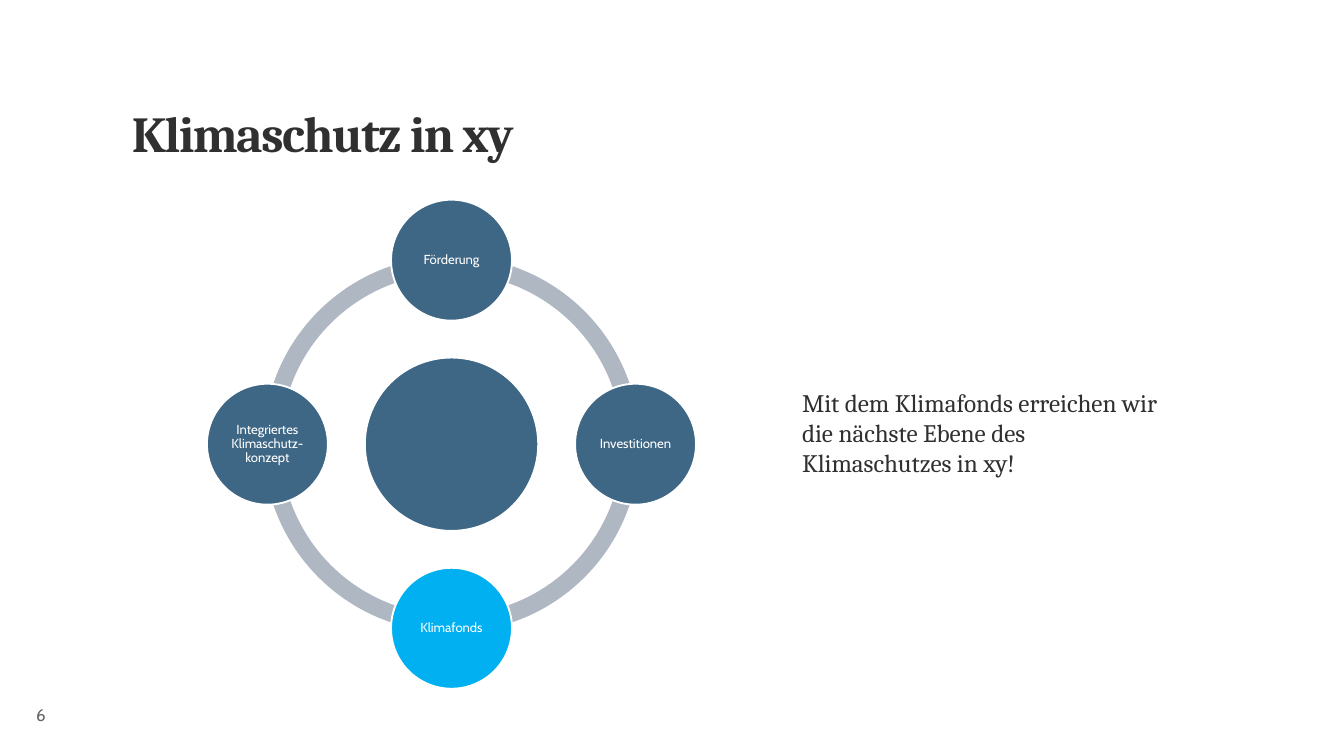
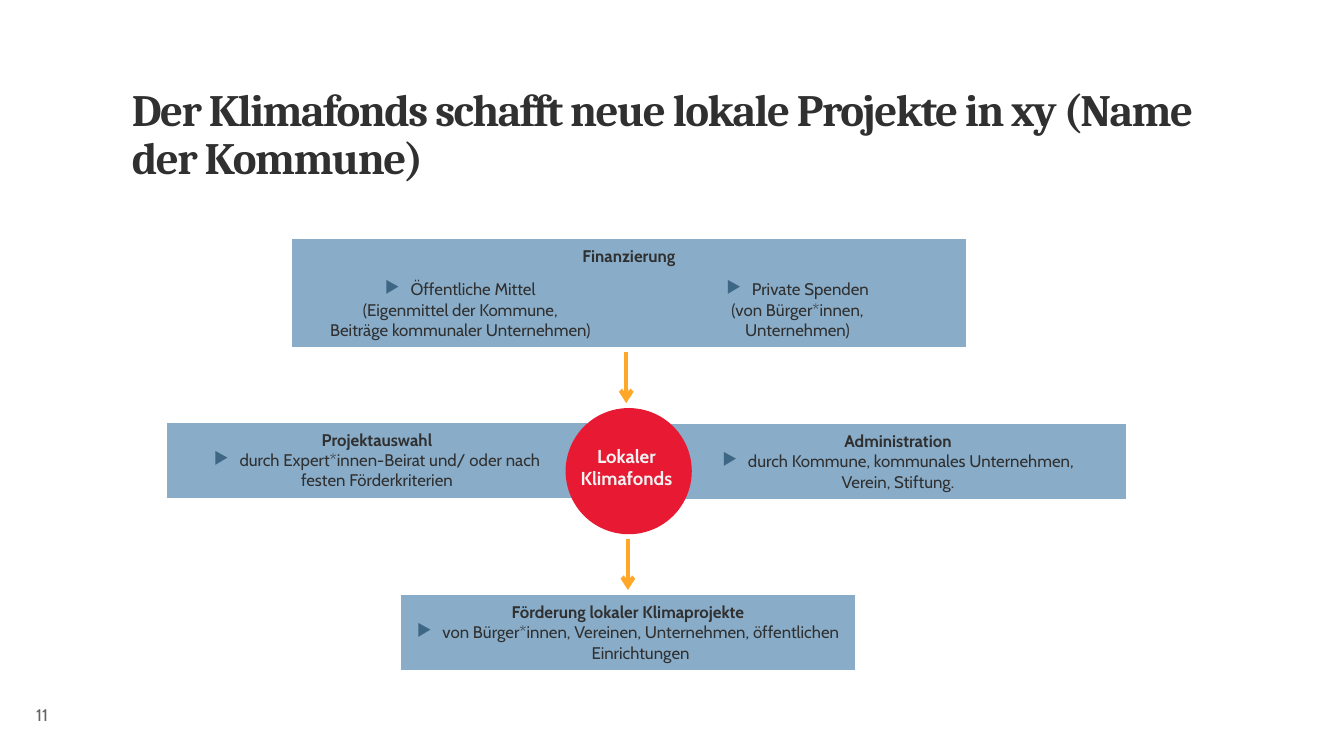
import dataclasses
import math

import lxml.etree
import pptx
import pptx.dml.color
import pptx.enum.shapes
import pptx.enum.text
import pptx.oxml.ns
import pptx.util

Pt = pptx.util.Pt
qn = pptx.oxml.ns.qn
SHAPE = pptx.enum.shapes.MSO_SHAPE
ALIGN = pptx.enum.text.PP_ALIGN
ANCHOR = pptx.enum.text.MSO_ANCHOR


@dataclasses.dataclass(frozen=True)
class Theme:
    """Colours, fonts and type sizes of the deck."""
    ink: str = "303030"
    muted: str = "636363"
    white: str = "FFFFFF"
    pale: str = "F2F2F2"
    navy: str = "3E6685"
    sky: str = "00B0F0"
    ring: str = "AFB8C2"
    panel: str = "89ADC9"
    red: str = "E81A33"
    amber: str = "FFA728"
    serif: str = "Cambria"
    sans: str = "Cabin"
    statement: float = 13.5
    label: float = 10
    body: float = 9
    node: float = 7


T = Theme()


def rgb(value):
    """Turn a hex string into a colour."""
    return pptx.dml.color.RGBColor.from_string(value)


def style(p, size, color, font=T.sans, bold=False, align=None, spacing=None):
    """Format a paragraph and all its runs."""
    p.alignment = align
    p.line_spacing = spacing
    for r in p.runs:
        r.font.size = Pt(size)
        r.font.name = font
        r.font.bold = bold
        r.font.color.rgb = rgb(color)


def set_frame(tf, anchor, margins):
    """Set wrapping, anchor and left, top, right, bottom margins."""
    tf.word_wrap = True
    tf.vertical_anchor = anchor
    tf.margin_left, tf.margin_top, tf.margin_right, tf.margin_bottom = map(Pt, margins)


def add_text(s, box, text, size, color, anchor=ANCHOR.TOP, margins=(7.2, 3.6, 7.2, 3.6), **look):
    """Add a one-paragraph text box and return the paragraph."""
    tf = s.shapes.add_textbox(*map(Pt, box)).text_frame
    set_frame(tf, anchor, margins)
    tf.text = text
    p = tf.paragraphs[0]
    style(p, size, color, **look)
    return p


def add_base(prs, title, title_size, number):
    """Add a blank slide with its title and page number."""
    s = prs.slides.add_slide(prs.slide_layouts[6])
    add_text(s, (19.4, 367.2, 39.6, 20.9), number, T.body, T.muted,
             anchor=ANCHOR.BOTTOM, margins=(0, 3.6, 7.2, 0))
    p = add_text(s, (70.6, 26.6, 572.4, 92.2), title, title_size, T.ink, anchor=ANCHOR.MIDDLE,
                 margins=(0, 0, 0, 0), font=T.serif, bold=True, spacing=0.9)
    for r in p.runs:
        r.font._element.set("spc", "-80")
    return s


def add_round(s, kind, cx, cy, size, fill, line=None):
    """Add a preset shape centred on a point."""
    sp = s.shapes.add_shape(kind, Pt(cx - size / 2), Pt(cy - size / 2), Pt(size), Pt(size))
    sp.shadow.inherit = False
    sp.fill.solid()
    sp.fill.fore_color.rgb = rgb(fill)
    if line:
        sp.line.color.rgb = rgb(line)
        sp.line.width = Pt(1)
    else:
        sp.line.fill.background()
    return sp


def add_cycle(s, cx, cy, nodes):
    """Add a hub, a ring of arcs and labelled nodes, clockwise from the top."""
    orbit, ring_size, hub_size, node_size = 98.6, 201.6, 92.9, 64.8
    step = 360 / len(nodes)
    for i in range(len(nodes)):
        arc = add_round(s, SHAPE.BLOCK_ARC, cx, cy, ring_size, T.ring)
        start = i * step
        for j, value in enumerate((start * 0.6, (start + step) % 360 * 0.6, 0.046)):
            arc.adjustments[j] = value
    add_round(s, SHAPE.OVAL, cx, cy, hub_size, T.navy, T.white)
    for i, (text, fill) in enumerate(nodes):
        angle = math.radians(i * step - 90)
        sp = add_round(s, SHAPE.OVAL, cx + orbit * math.cos(angle),
                       cy + orbit * math.sin(angle), node_size, fill, T.white)
        tf = sp.text_frame
        set_frame(tf, ANCHOR.MIDDLE, (0.7, 0.7, 0.7, 0.7))
        tf.text = text
        style(tf.paragraphs[0], T.node, T.white, align=ALIGN.CENTER, spacing=0.9)


def add_bullet(p):
    """Give a paragraph a hanging triangle bullet."""
    pPr = p._p.get_or_add_pPr()
    pPr.set("marL", str(Pt(13.7)))
    pPr.set("indent", str(-Pt(13.7)))
    color = lxml.etree.SubElement(pPr, qn("a:buClr"))
    lxml.etree.SubElement(color, qn("a:srgbClr"), val=T.navy)
    lxml.etree.SubElement(pPr, qn("a:buChar"), char="▶")


def fill_cell(cell, heading, lines):
    """Write an optional bold heading, then lines of which the first is bulleted."""
    cell.fill.solid()
    cell.fill.fore_color.rgb = rgb(T.panel)
    tcPr = cell._tc.get_or_add_tcPr()
    for i, side in enumerate(("a:lnL", "a:lnR", "a:lnT", "a:lnB")):
        ln = lxml.etree.Element(qn(side), w="0")
        lxml.etree.SubElement(ln, qn("a:noFill"))
        tcPr.insert(i, ln)
    texts = ([heading] if heading else []) + lines
    cell.text_frame.text = "\n".join(texts)
    first_line = 1 if heading else 0
    for i, p in enumerate(cell.text_frame.paragraphs):
        style(p, T.body, T.ink, bold=i < first_line, align=ALIGN.CENTER)
        if i == first_line and lines:
            add_bullet(p)


def add_panel(s, left, top, width, heights, rows):
    """Add a panel table; rows hold (heading, lines) cells and a lone cell spans its row."""
    cols = max(map(len, rows))
    table = s.shapes.add_table(len(rows), cols, Pt(left), Pt(top), Pt(width), Pt(sum(heights))).table
    table.first_row = table.horz_banding = False
    for i, (height, cells) in enumerate(zip(heights, rows)):
        table.rows[i].height = Pt(height)
        if len(cells) < cols:
            table.cell(i, 0).merge(table.cell(i, cols - 1))
        for j, content in enumerate(cells):
            fill_cell(table.cell(i, j), *content)


def add_down_arrow(s, x, top, length):
    """Add a downward arrow."""
    line = s.shapes.add_connector(pptx.enum.shapes.MSO_CONNECTOR.STRAIGHT,
                                  Pt(x), Pt(top), Pt(x), Pt(top + length))
    line.line.color.rgb = rgb(T.amber)
    line.line.width = Pt(2.25)
    lxml.etree.SubElement(line.line._get_or_add_ln(), qn("a:tailEnd"), type="arrow")
    lxml.etree.SubElement(line._element.spPr, qn("a:effectLst"))


def build_cycle_slide(prs):
    """Build the slide on climate protection activities."""
    s = add_base(prs, "Klimaschutz in xy", 27, "6")
    add_cycle(s, 241.9, 238, [
        ("Förderung", T.navy),
        ("Investitionen", T.navy),
        ("Klimafonds", T.sky),
        ("Integriertes Klimaschutz- konzept", T.navy),
    ])
    add_text(s, (422.6, 203.8, 206.6, 56.2),
             "Mit dem Klimafonds erreichen wir die nächste Ebene des Klimaschutzes in xy!",
             T.statement, T.ink, font=T.serif)


def build_fund_slide(prs):
    """Build the slide on how the fund works."""
    s = add_base(prs, "Der Klimafonds schafft neue lokale Projekte in xy (Name der Kommune)", 24, "11")
    add_panel(s, 358.6, 227.4, 244.8, [39.8], [[
        ("Administration", ["durch Kommune, kommunales Unternehmen,", "Verein, Stiftung."])]])
    add_panel(s, 89.2, 226.8, 225.4, [39.8], [[
        ("Projektauswahl", ["durch Expert*innen-Beirat und/ oder nach", "festen Förderkriterien"])]])
    add_round(s, SHAPE.OVAL, 336.8, 252.4, 67.6, T.red)
    add_text(s, (301, 234.7, 69.1, 31.7), "Lokaler Klimafonds", T.label, T.pale,
             bold=True, align=ALIGN.CENTER)
    add_panel(s, 156.2, 128.2, 361.4, [18, 39.8], [
        [("Finanzierung", [])],
        [(None, ["Öffentliche Mittel", "(Eigenmittel der Kommune,", "Beiträge kommunaler Unternehmen)"]),
         (None, ["Private Spenden", "(von Bürger*innen,", "Unternehmen)"])],
    ])
    add_panel(s, 214.6, 319, 243.4, [39.8], [[
        ("Förderung lokaler Klimaprojekte",
         ["von Bürger*innen, Vereinen, Unternehmen, öffentlichen Einrichtungen"])]])
    for x, top in ((335.5, 188.6), (336.4, 288.7)):
        add_down_arrow(s, x, top, 27.4)


def main():
    """Build and save the deck."""
    prs = pptx.Presentation()
    prs.slide_width, prs.slide_height = Pt(720), Pt(405)
    build_cycle_slide(prs)
    build_fund_slide(prs)
    prs.save("out.pptx")


if __name__ == "__main__":
    main()
